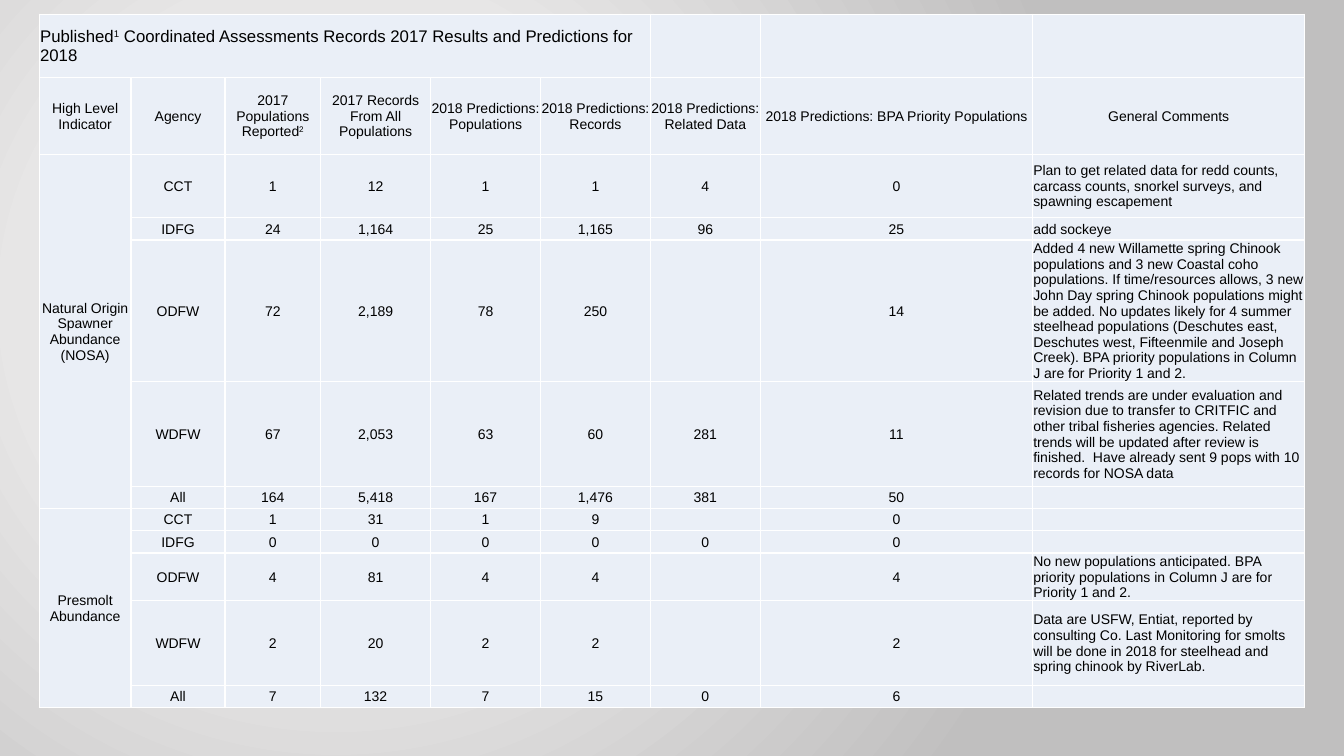
from lxml import etree
from pptx import Presentation
from pptx.dml.color import RGBColor
from pptx.enum.text import MSO_ANCHOR, PP_ALIGN
from pptx.oxml import parse_xml
from pptx.oxml.ns import nsdecls, qn
from pptx.util import Cm, Pt

BLACK = RGBColor(0x00, 0x00, 0x00)
WHITE = RGBColor(0xFF, 0xFF, 0xFF)
PALE_BLUE = RGBColor(0xEA, 0xEF, 0xF7)
LIGHT_GREY = RGBColor(0xE8, 0xE7, 0xE7)
MID_GREY = RGBColor(0xE7, 0xE6, 0xE6)
DARK_GREY = RGBColor(0xC0, 0xBF, 0xBF)

COLUMNS = [2.31, 2.37, 2.41] + [2.77] * 4 + [6.86] * 2
HEIGHTS = [1.6, 1.93, 1.6, 0.56, 3.25, 2.64, 0.56, 0.56, 0.56, 1.12, 2.13, 0.56]
COMMENTS = len(COLUMNS) - 1
TITLE = "Published^1^ Coordinated Assessments Records 2017 Results and Predictions for 2018"
HEADER = [
    "High Level Indicator", "Agency", "2017 Populations Reported^2^",
    "2017 Records From All Populations", "2018 Predictions: Populations",
    "2018 Predictions: Records", "2018 Predictions: Related Data",
    "2018 Predictions: BPA Priority Populations", "General Comments",
]
INDICATORS = {
    "Natural Origin Spawner Abundance (NOSA)": [
        ["CCT", "1", "12", "1", "1", "4", "0",
         "Plan to get related data for redd counts, carcass counts, snorkel surveys, "
         "and spawning escapement"],
        ["IDFG", "24", "1,164", "25", "1,165", "96", "25", "add sockeye"],
        ["ODFW", "72", "2,189", "78", "250", "", "14",
         "Added 4 new Willamette spring Chinook populations and 3 new Coastal coho "
         "populations. If time/resources allows, 3 new John Day spring Chinook "
         "populations might be added. No updates likely for 4 summer steelhead "
         "populations (Deschutes east, Deschutes west, Fifteenmile and Joseph Creek). "
         "BPA priority populations in Column J are for Priority 1 and 2."],
        ["WDFW", "67", "2,053", "63", "60", "281", "11",
         "Related trends are under evaluation and revision due to transfer to CRITFIC "
         "and other tribal fisheries agencies. Related trends will be updated after "
         "review is finished.  Have already sent 9 pops with 10 records for NOSA data"],
        ["All", "164", "5,418", "167", "1,476", "381", "50", ""],
    ],
    "Presmolt Abundance": [
        ["CCT", "1", "31", "1", "9", "", "0", ""],
        ["IDFG", "0", "0", "0", "0", "0", "0", ""],
        ["ODFW", "4", "81", "4", "4", "", "4",
         "No new populations anticipated. BPA priority populations in Column J are for "
         "Priority 1 and 2."],
        ["WDFW", "2", "20", "2", "2", "", "2",
         "Data are USFW, Entiat, reported by consulting Co. Last Monitoring for smolts "
         "will be done in 2018 for steelhead and spring chinook by RiverLab."],
        ["All", "7", "132", "7", "15", "0", "6", ""],
    ],
}


class Deck:
    """Holds the style and the current slide, and draws its elements."""

    font = "Arial"

    def __init__(self, prs):
        self.slide = prs.slides.add_slide(prs.slide_layouts[6])

    def background(self, stops):
        gs = "".join(f'<a:gs pos="{pos * 1000}"><a:srgbClr val="{color}"/></a:gs>'
                     for pos, color in stops)
        bg = parse_xml(
            f'<p:bg {nsdecls("p", "a")}><p:bgPr><a:gradFill rotWithShape="1">'
            f'<a:gsLst>{gs}</a:gsLst><a:path path="circle">'
            '<a:fillToRect l="50000" t="80000" r="100000" b="100000"/></a:path>'
            '</a:gradFill><a:effectLst/></p:bgPr></p:bg>')
        self.slide._element.cSld.insert(0, bg)

    def table(self, left, top, height, columns, heights):
        frame = self.slide.shapes.add_table(
            len(heights), len(columns), Cm(left), Cm(top), Cm(sum(columns)), Cm(height))
        table = frame.table
        table.first_row = table.horz_banding = False
        for column, width in zip(table.columns, columns):
            column.width = Cm(width)
        for row, row_height in zip(table.rows, heights):
            row.height = Cm(row_height)
        for cell in table.iter_cells():
            self.style(cell)
        return table

    def style(self, cell):
        cell.margin_left = cell.margin_right = cell.margin_top = Cm(0.02)
        cell.margin_bottom = 0
        cell.vertical_anchor = MSO_ANCHOR.MIDDLE
        tc_pr = cell._tc.get_or_add_tcPr()
        for side in ("lnL", "lnR", "lnT", "lnB"):
            tc_pr.append(parse_xml(
                f'<a:{side} {nsdecls("a")} w="{Pt(1)}"><a:solidFill>'
                f'<a:srgbClr val="{WHITE}"/></a:solidFill></a:{side}>'))
        cell.fill.solid()
        cell.fill.fore_color.rgb = PALE_BLUE

    def label(self, cell, text, size=10, align=PP_ALIGN.CENTER):
        p = cell.text_frame.paragraphs[0]
        p.alignment = align
        if not text:
            etree.SubElement(p._p, qn("a:endParaRPr"), sz=str(size * 100))
        for i, part in enumerate(text.split("^")):
            if part:
                r = p.add_run()
                r.text = part
                r.font.name = self.font
                r.font.size = Pt(size)
                r.font.color.rgb = BLACK
                if i % 2:
                    r.font._element.set("baseline", "30000")


def main():
    prs = Presentation()
    prs.slide_width, prs.slide_height = Cm(33.87), Cm(19.05)
    deck = Deck(prs)
    deck.background([(0, LIGHT_GREY), (41, MID_GREY), (100, DARK_GREY)])
    table = deck.table(0.99, 0.36, 17.88, COLUMNS, HEIGHTS)

    table.cell(0, 0).merge(table.cell(0, 5))
    deck.label(table.cell(0, 0), TITLE, 12, PP_ALIGN.LEFT)
    for col in range(6, len(COLUMNS)):
        deck.label(table.cell(0, col), "")
    for col, text in enumerate(HEADER):
        deck.label(table.cell(1, col), text)

    row = 2
    for indicator, records in INDICATORS.items():
        table.cell(row, 0).merge(table.cell(row + len(records) - 1, 0))
        deck.label(table.cell(row, 0), indicator)
        for record in records:
            for col, text in enumerate(record, 1):
                align = PP_ALIGN.LEFT if col == COMMENTS else PP_ALIGN.CENTER
                deck.label(table.cell(row, col), text, align=align)
            row += 1
    table.cell(4, COMMENTS).vertical_anchor = MSO_ANCHOR.BOTTOM
    prs.save("out.pptx")


if __name__ == "__main__":
    main()
